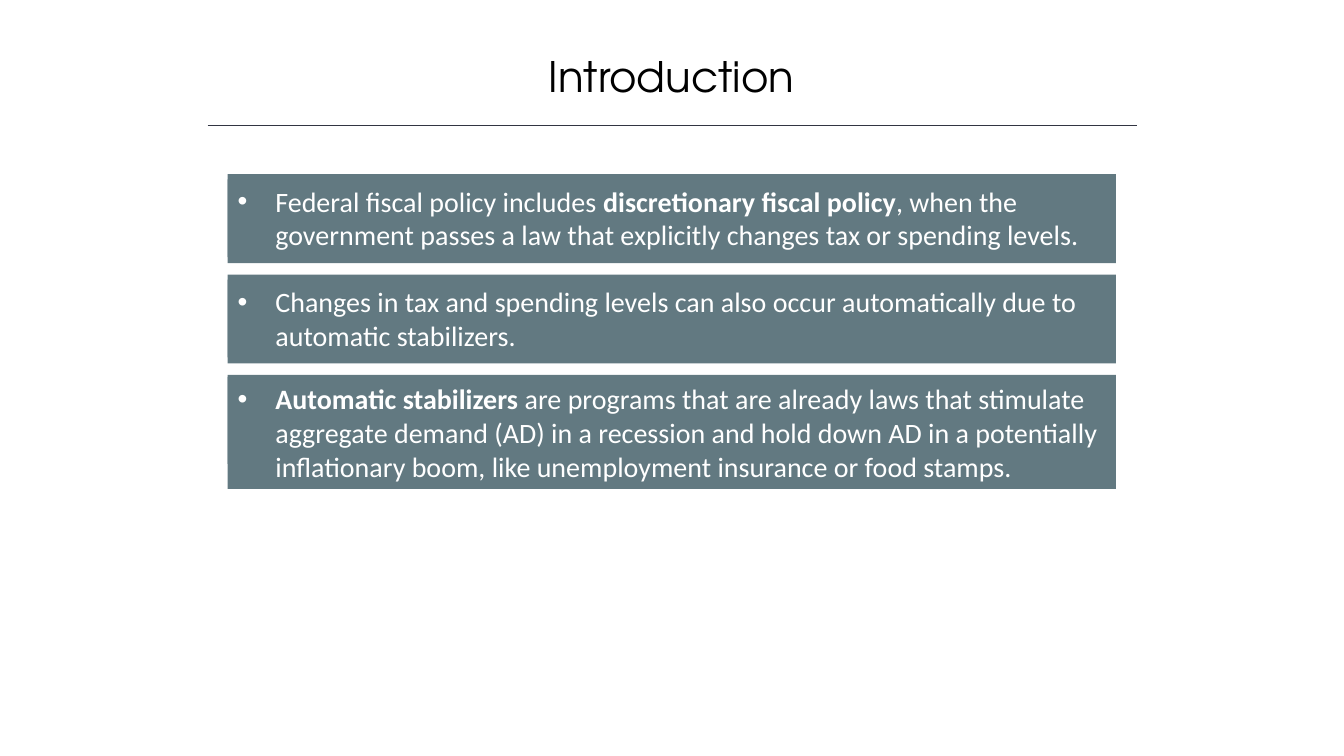
from lxml import etree
from pptx import Presentation
from pptx import util as u
from pptx.dml.color import RGBColor
from pptx.enum import shapes, text
from pptx.oxml import ns

COLORS = {"title": "000000", "rule": "323542", "panel": "627981", "body": "FFFFFF"}

PANEL_LEFT, PANEL_TOP = 5.74, 4.39
PANEL_WIDTH, PANEL_HEIGHT, PANEL_STEP = 22.38, 2.24, 2.53

# Each point: text inset from the panel top, text height, (words, bold) runs
POINTS = [
    (0.13, 1.96, [
        ("Federal fiscal policy includes ", False),
        ("discretionary fiscal policy", True),
        (", when the government passes a law that explicitly changes tax "
         "or spending levels.", False)]),
    (0.13, 1.96, [
        ("Changes in tax and spending levels can also occur automatically "
         "due to automatic stabilizers.", False)]),
    (0.05, 2.82, [
        ("Automatic stabilizers ", True),
        ("are programs that are already laws that stimulate aggregate demand "
         "(AD) in a recession and hold down AD in a potentially inflationary "
         "boom, like unemployment insurance or food stamps.", False)]),
]


def color(name):
    return RGBColor.from_string(COLORS[name])


def add_run(paragraph, words, *, size, font, fill, bold=False):
    run = paragraph.add_run()
    run.text = words
    run.font.size = u.Pt(size)
    run.font.name = font
    run.font.bold = bold
    run.font.color.rgb = color(fill)


def add_bullet(paragraph):
    """Give the paragraph a round bullet and a hanging indent."""
    properties = paragraph._p.get_or_add_pPr()
    indent = u.Cm(0.95)
    properties.set("marL", str(indent))
    properties.set("indent", str(-indent))
    font = etree.SubElement(properties, ns.qn("a:buFont"))
    font.set("typeface", "Arial")
    bullet = etree.SubElement(properties, ns.qn("a:buChar"))
    bullet.set("char", "•")


def add_title(slide, words):
    box = slide.shapes.add_textbox(u.Cm(4.72), u.Cm(1.14), u.Cm(24.41), u.Cm(1.55))
    box.text_frame.word_wrap = True
    paragraph = box.text_frame.paragraphs[0]
    paragraph.alignment = text.PP_ALIGN.CENTER
    add_run(paragraph, words, size=30, font="TeX Gyre Adventor", fill="title")


def add_rule(slide, left, right, top):
    rule = slide.shapes.add_connector(
        shapes.MSO_CONNECTOR.STRAIGHT, u.Cm(left), u.Cm(top), u.Cm(right), u.Cm(top))
    rule.line.color.rgb = color("rule")
    rule.line.width = u.Pt(1)
    etree.SubElement(rule._element.spPr, ns.qn("a:effectLst"))


def add_rectangle(group, top, height):
    rectangle = group.shapes.add_shape(
        shapes.MSO_SHAPE.RECTANGLE,
        u.Cm(PANEL_LEFT), u.Cm(top), u.Cm(PANEL_WIDTH), u.Cm(height))
    rectangle.shadow.inherit = False
    rectangle.fill.solid()
    rectangle.fill.fore_color.rgb = color("panel")
    rectangle.line.fill.background()
    return rectangle


def add_point(slide, top, inset, text_height, runs):
    """Add a panel with a bulleted text block grouped on it."""
    group = slide.shapes.add_group_shape()
    add_rectangle(group, top, PANEL_HEIGHT)
    frame = add_rectangle(group, top + inset, text_height).text_frame
    frame.word_wrap = True
    frame.vertical_anchor = text.MSO_ANCHOR.TOP
    paragraph = frame.paragraphs[0]
    paragraph.alignment = text.PP_ALIGN.LEFT
    add_bullet(paragraph)
    for words, bold in runs:
        add_run(paragraph, words, size=20, font="Calibri", fill="body", bold=bold)


def main():
    presentation = Presentation()
    presentation.slide_width = u.Cm(33.87)
    presentation.slide_height = u.Cm(19.05)
    slide = presentation.slides.add_slide(presentation.slide_layouts[6])

    add_title(slide, "Introduction")
    add_rule(slide, left=5.23, right=28.65, top=3.16)
    for index, (inset, text_height, runs) in enumerate(POINTS):
        add_point(slide, PANEL_TOP + index * PANEL_STEP, inset, text_height, runs)

    presentation.save("out.pptx")


if __name__ == "__main__":
    main()
